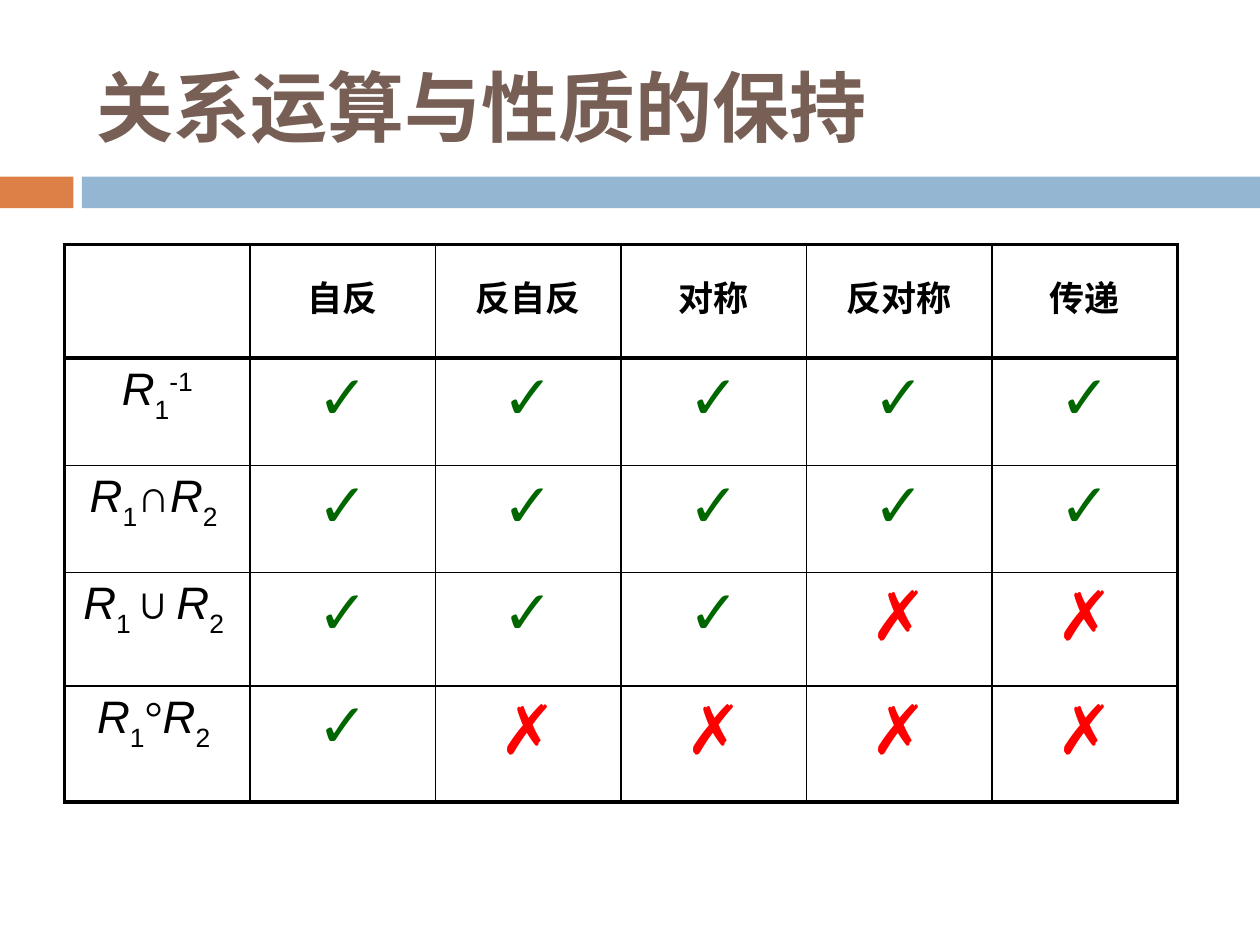
"""Builds a slide with a table of relation operations and the properties they keep."""
from dataclasses import dataclass

from pptx import Presentation
from pptx.dml.color import RGBColor
from pptx.enum.shapes import MSO_SHAPE as SHAPE
from pptx.enum.text import MSO_ANCHOR as ANCHOR, PP_ALIGN as ALIGN
from pptx.oxml.ns import qn
from pptx.util import Cm, Pt
from lxml.etree import SubElement


@dataclass(frozen=True)
class Run:
    text: str
    size: float
    color: str = "000000"
    font: str = "Arial"
    bold: bool = False
    italic: bool = False
    baseline: int = 0


@dataclass(frozen=True)
class Bar:
    left: float
    width: float
    color: str


@dataclass(frozen=True)
class Operation:
    label: list[Run]
    marks: str
    height: float


R = Run("R", 26, italic=True)
MARKS = {
    "✓": Run("✓", 35, "006600", bold=True),
    "✗": Run("✗", 39, "FF0000", bold=True),
}
BARS = [Bar(0, 1.48, "DD8047"), Bar(1.65, 23.75, "94B6D2")]
HEADERS = ["", "自反", "反自反", "对称", "反对称", "传递"]
HEADER_HEIGHT, COL_WIDTH = 2.29, 3.74
THIN, OUTER, HEADER_LINE = 1, 2.25, 3


def script(text: str, baseline: int = -30) -> Run:
    return Run(text, 26, baseline=baseline)


def binary(operator: str) -> list[Run]:
    return [R, script("1"), Run(operator, 26, font="Times New Roman"), R, script("2 ")]


OPERATIONS = [
    Operation([R, script("1"), script("-1", 30)], "✓✓✓✓✓", 2.16),
    Operation(binary("∩"), "✓✓✓✓✓", 2.16),
    Operation(binary("∪"), "✓✓✓✗✗", 2.29),
    Operation(binary("°"), "✓✗✗✗✗", 2.34),
]


def rgb(color: str) -> RGBColor:
    return RGBColor.from_string(color)


def add_run(p, run: Run) -> None:
    r = p.add_run()
    r.text = run.text
    f = r.font
    f.name, f.size, f.bold, f.italic = run.font, Pt(run.size), run.bold, run.italic
    f.color.rgb = rgb(run.color)
    if run.baseline:
        r._r.get_or_add_rPr().set("baseline", str(run.baseline * 1000))


def add_bar(s, bar: Bar) -> None:
    sp = s.shapes.add_shape(SHAPE.RECTANGLE, Cm(bar.left), Cm(3.56), Cm(bar.width), Cm(0.64))
    sp.shadow.inherit = False
    sp.fill.solid()
    sp.fill.fore_color.rgb = rgb(bar.color)
    sp.line.fill.background()


def add_title(s, run: Run) -> None:
    sp = s.shapes.add_textbox(Cm(1.7), Cm(0.33), Cm(20.52), Cm(3.61))
    tf = sp.text_frame
    tf.word_wrap = True
    tf.vertical_anchor = ANCHOR.MIDDLE
    add_run(tf.paragraphs[0], run)


def set_borders(cell, widths: dict[str, float]) -> None:
    tc_pr = cell._tc.get_or_add_tcPr()
    for side, width in widths.items():
        ln = SubElement(tc_pr, qn(f"a:ln{side}"), w=str(Pt(width)))
        fill = SubElement(ln, qn("a:solidFill"))
        SubElement(fill, qn("a:srgbClr"), val="000000")


def fill_cell(cell, runs: list[Run], borders: dict[str, float]) -> None:
    set_borders(cell, borders)
    cell.fill.background()
    p = cell.text_frame.paragraphs[0]
    p.alignment = ALIGN.CENTER
    for run in runs:
        add_run(p, run)


def add_property_table(s) -> None:
    header = [[Run(h, 20, bold=True)] if h else [] for h in HEADERS]
    rows = [header] + [[op.label] + [[MARKS[m]] for m in op.marks] for op in OPERATIONS]
    heights = [HEADER_HEIGHT] + [op.height for op in OPERATIONS]
    n_rows, n_cols = len(rows), len(HEADERS)
    frame = s.shapes.add_table(n_rows, n_cols, Cm(1.3), Cm(4.93),
                               Cm(COL_WIDTH * n_cols), Cm(sum(heights)))
    table = frame.table
    table.first_row = table.horz_banding = False
    for col in table.columns:
        col.width = Cm(COL_WIDTH)
    h_lines = [OUTER, HEADER_LINE] + [THIN] * (n_rows - 2) + [OUTER]
    v_lines = [OUTER] + [THIN] * (n_cols - 1) + [OUTER]
    for i, cells in enumerate(rows):
        table.rows[i].height = Cm(heights[i])
        for j, runs in enumerate(cells):
            cell = table.cell(i, j)
            if i == 0:
                cell.margin_top = Cm(0.53)
            fill_cell(cell, runs, {"L": v_lines[j], "R": v_lines[j + 1],
                                   "T": h_lines[i], "B": h_lines[i + 1]})


def main() -> None:
    prs = Presentation()
    prs.slide_width, prs.slide_height = Cm(25.4), Cm(19.05)
    s = prs.slides.add_slide(prs.slide_layouts[6])
    for bar in BARS:
        add_bar(s, bar)
    add_property_table(s)
    add_title(s, Run("关系运算与性质的保持", 44, "775F55", "Calibri", bold=True))
    prs.save("out.pptx")


if __name__ == "__main__":
    main()
